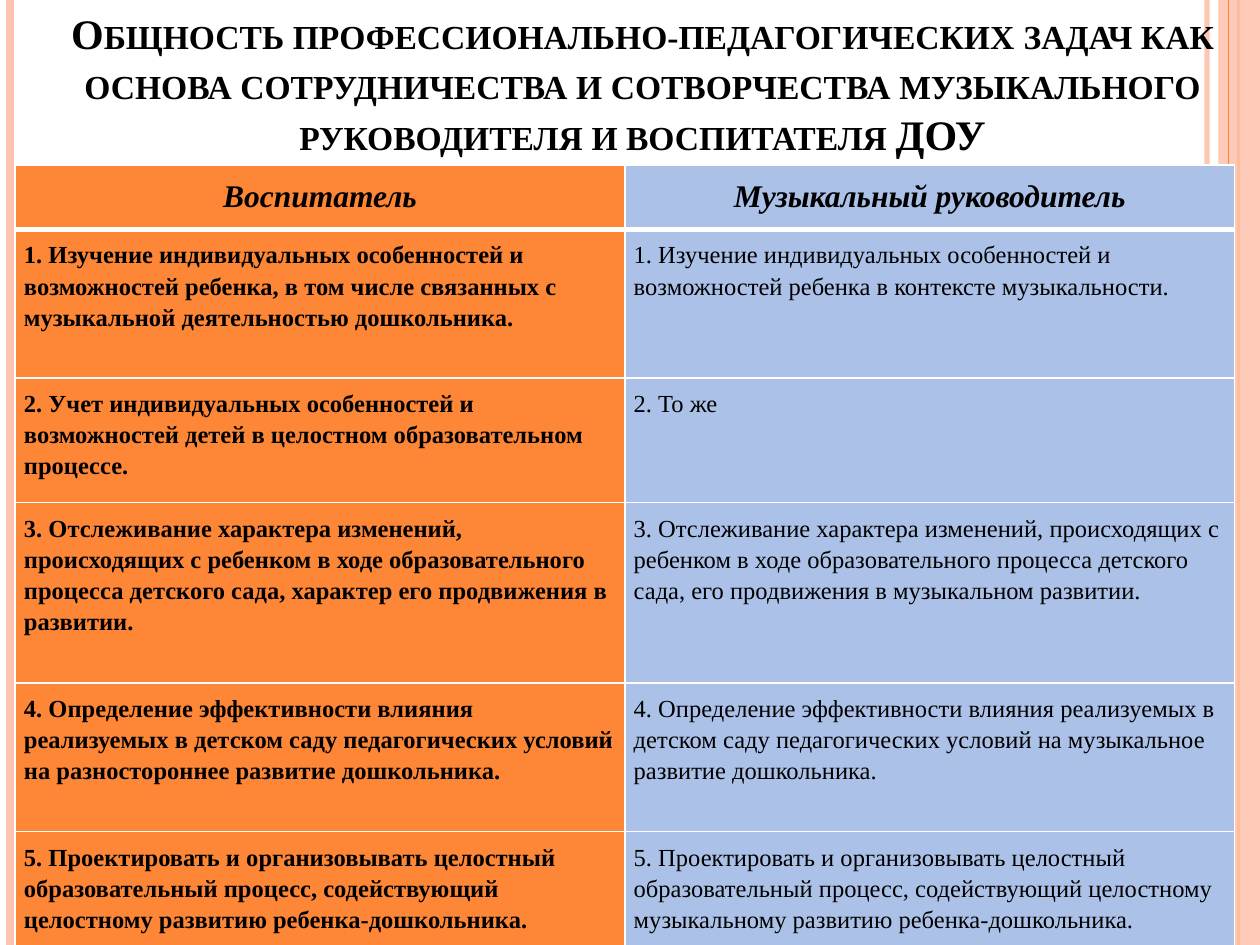
"""Build a slide comparing the tasks of the kindergarten teacher and the music director."""
from dataclasses import dataclass

from lxml import etree
from pptx import Presentation
from pptx.dml.color import RGBColor
from pptx.enum.shapes import MSO_CONNECTOR, MSO_SHAPE
from pptx.enum.text import MSO_ANCHOR, MSO_AUTO_SIZE, PP_ALIGN
from pptx.oxml.ns import qn
from pptx.util import Inches, Pt

STRAIGHT, RECTANGLE = MSO_CONNECTOR.STRAIGHT, MSO_SHAPE.RECTANGLE
LEFT, CENTER = PP_ALIGN.LEFT, PP_ALIGN.CENTER
BOTTOM, NO_FIT = MSO_ANCHOR.BOTTOM, MSO_AUTO_SIZE.NONE
TITLE_ONLY = 5


@dataclass(frozen=True)
class Theme:
    """Colours, font and type sizes of the slide."""
    font: str = "Times New Roman"
    ink: str = "000000"
    white: str = "FFFFFF"
    orange: str = "FE8637"
    blue: str = "ACC1E8"
    peach: str = "FEC3AE"
    title: int = 24
    header: int = 18
    body: int = 14


THEME = Theme()
PAGE_WIDTH, PAGE_HEIGHT = 10, 7.5
TITLE = (
    "Общность профессионально-педагогических задач как основа сотрудничества "
    "и сотворчества музыкального руководителя и воспитателя ДОУ"
)
HEADERS = ("Воспитатель", "Музыкальный руководитель")
TASKS = [
    ("1. Изучение индивидуальных особенностей и возможностей ребенка, в том числе "
     "связанных с музыкальной деятельностью дошкольника.",
     "1. Изучение индивидуальных особенностей и возможностей ребенка в контексте музыкальности."),
    ("2. Учет индивидуальных особенностей и возможностей детей в целостном "
     "образовательном процессе.",
     "2. То же"),
    ("3. Отслеживание характера изменений, происходящих с ребенком в ходе образовательного "
     "процесса детского сада, характер его продвижения в развитии.",
     "3. Отслеживание характера изменений, происходящих с ребенком в ходе образовательного "
     "процесса детского сада, его продвижения в музыкальном развитии."),
    ("4. Определение эффективности влияния реализуемых в детском саду педагогических "
     "условий на разностороннее развитие дошкольника.",
     "4. Определение эффективности влияния реализуемых в детском саду педагогических "
     "условий на музыкальное развитие дошкольника."),
    ("5. Проектировать и организовывать целостный образовательный процесс, содействующий "
     "целостному развитию ребенка-дошкольника.",
     "5. Проектировать и организовывать целостный образовательный процесс, содействующий "
     "целостному музыкальному развитию ребенка-дошкольника."),
]
ROW_HEIGHTS = (0.51, 1.18, 0.99, 1.43, 1.18, 1.18)
COLUMN_WIDTH = 4.84
COLUMN_FILLS = (THEME.orange, THEME.blue)
CELL_INSET = 0.07
BACK_STRIPES = [(9.58, THEME.peach, 3, 93), (0.08, THEME.peach, 4.5, 100), (9.83, THEME.orange, 1.5, 100)]
FRONT_STRIPES = [(9.75, THEME.orange, 0.75, 100)]
BAND = (9.67, 0, 0.33, PAGE_HEIGHT)


def write_text(frame, text, *, size, bold=False, italic=False, align=LEFT,
               spacing=1.0, small_caps=False):
    para = frame.paragraphs[0]
    para.alignment, para.line_spacing = align, spacing
    span = para.add_run()
    span.text = text
    font = span.font
    font.name, font.size, font.bold, font.italic = THEME.font, Pt(size), bold, italic
    font.color.rgb = RGBColor.from_string(THEME.ink)
    if small_caps:
        font._element.set("cap", "small")


def set_opacity(element, percent):
    color = next(element.iter(qn("a:srgbClr")))
    etree.SubElement(color, qn("a:alpha")).set("val", str(percent * 1000))


def add_stripe(page, left, color, width, opacity):
    stripe = page.shapes.add_connector(
        STRAIGHT, Inches(left), 0, Inches(left), Inches(PAGE_HEIGHT))
    stripe.line.color.rgb = RGBColor.from_string(color)
    stripe.line.width = Pt(width)
    set_opacity(stripe.line._ln, opacity)
    etree.SubElement(stripe._element.spPr, qn("a:effectLst"))


def add_band(page):
    band = page.shapes.add_shape(RECTANGLE, *map(Inches, BAND))
    band.shadow.inherit = False
    band.fill.solid()
    band.fill.fore_color.rgb = RGBColor.from_string(THEME.peach)
    set_opacity(band._element.spPr, 87)
    band.line.fill.background()


def add_title(page):
    box = page.shapes.title
    box.left, box.top, box.width, box.height = map(Inches, (0.21, 0.13, 9.78, 1.18))
    box._element.getparent().append(box._element)
    frame = box.text_frame
    frame.word_wrap, frame.auto_size, frame.vertical_anchor = True, NO_FIT, BOTTOM
    write_text(frame, TITLE, size=THEME.title, bold=True, align=CENTER, small_caps=True)


def set_borders(cell, widths):
    properties = cell._tc.get_or_add_tcPr()
    for position, (side, width) in enumerate(widths.items()):
        line = etree.Element(qn(f"a:{side}"), w=str(Pt(width)))
        fill = etree.SubElement(line, qn("a:solidFill"))
        etree.SubElement(fill, qn("a:srgbClr")).set("val", THEME.white)
        properties.insert(position, line)


def add_task_table(page):
    rows = [HEADERS, *TASKS]
    table = page.shapes.add_table(
        len(rows), len(HEADERS), Inches(0.12), Inches(1.31),
        Inches(COLUMN_WIDTH * len(HEADERS)), Inches(sum(ROW_HEIGHTS))).table
    for column in table.columns:
        column.width = Inches(COLUMN_WIDTH)
    for row_index, (texts, height) in enumerate(zip(rows, ROW_HEIGHTS)):
        table.rows[row_index].height = Inches(height)
        is_header = row_index == 0
        for column_index, text in enumerate(texts):
            cell = table.cell(row_index, column_index)
            cell.margin_left = cell.margin_right = Inches(CELL_INSET)
            cell.margin_top = cell.margin_bottom = Inches(CELL_INSET)
            cell.fill.solid()
            cell.fill.fore_color.rgb = RGBColor.from_string(COLUMN_FILLS[column_index])
            set_borders(cell, {"lnL": 1, "lnR": 1, "lnT": 3 if row_index == 1 else 1,
                               "lnB": 3 if is_header else 1})
            write_text(cell.text_frame, text, spacing=1.15, italic=is_header,
                       size=THEME.header if is_header else THEME.body,
                       bold=is_header or column_index == 0,
                       align=CENTER if is_header else LEFT)


def main():
    deck = Presentation()
    deck.slide_width, deck.slide_height = Inches(PAGE_WIDTH), Inches(PAGE_HEIGHT)
    page = deck.slides.add_slide(deck.slide_layouts[TITLE_ONLY])
    for stripe in BACK_STRIPES:
        add_stripe(page, *stripe)
    add_band(page)
    for stripe in FRONT_STRIPES:
        add_stripe(page, *stripe)
    add_title(page)
    add_task_table(page)
    deck.save("out.pptx")


if __name__ == "__main__":
    main()
